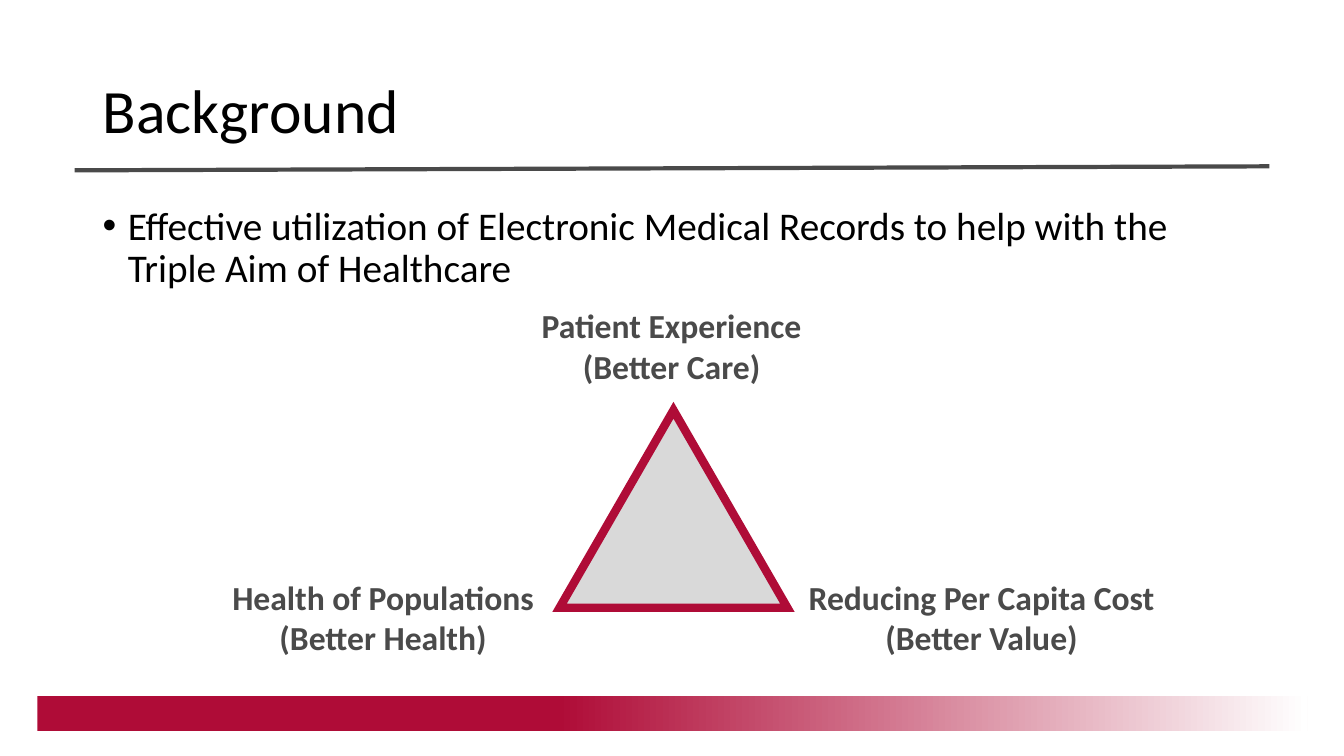
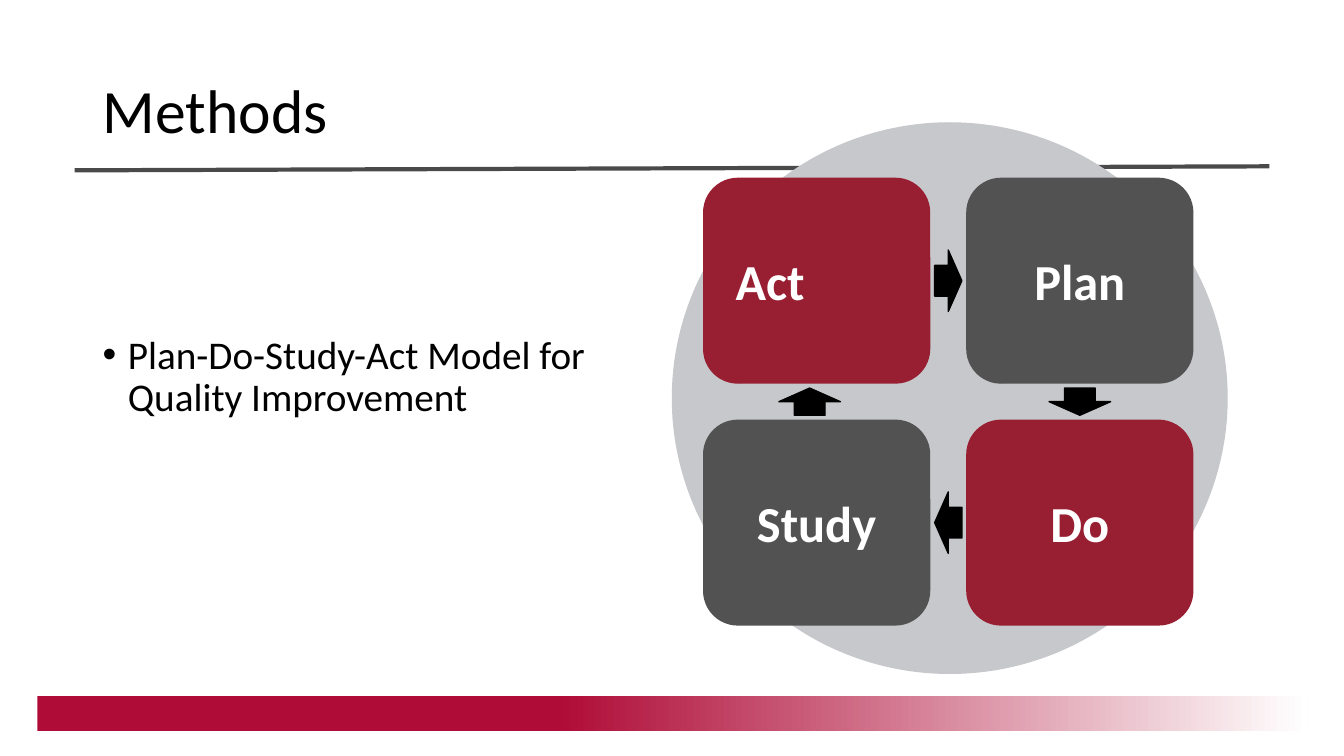
from copy import deepcopy

from lxml.etree import SubElement
from pptx import Presentation
from pptx.dml.color import RGBColor
from pptx.enum.shapes import MSO_CONNECTOR, MSO_SHAPE
from pptx.enum.text import MSO_ANCHOR, MSO_AUTO_SIZE, PP_ALIGN
from pptx.oxml.ns import qn
from pptx.util import Inches, Pt

# Shared style
FONT = "Calibri"
BLACK, WHITE, GREY = "000000", "FFFFFF", "4A4A4A"
CRIMSON, CARD_RED, CARD_GREY = "AF0C37", "981E32", "525252"
DISC, PALE = "C7C8CB", "D9D9D9"
TITLE = dict(size=Pt(44))
BODY = dict(size=Pt(28))
LABEL = dict(size=Pt(24), bold=True)
CARD = dict(size=Pt(36), bold=True)

# Content: title, bullet, box of the bullet, its anchor
BACKGROUND = ("Background",
              "Effective utilization of Electronic Medical Records to help "
              "with the Triple Aim of Healthcare",
              (0.92, 2, 11.5, 1.1), MSO_ANCHOR.TOP)
METHODS = ("Methods", "Plan-Do-Study-Act Model for Quality Improvement",
           (0.92, 3.1, 5.75, 1.3), MSO_ANCHOR.MIDDLE)

AIMS = [  # lines, box
    (("Patient Experience", "(Better Care)"), (4.92, 2.98, 3.48, 0.91)),
    (("Reducing Per Capita Cost", "(Better Value)"), (7.81, 5.67, 3.85, 0.91)),
    (("Health of Populations", "(Better Health)"), (2.06, 5.67, 3.48, 0.91)),
]

STEPS = [  # text, column, row, fill, right inset
    ("Plan", 1, 0, CARD_GREY, 0.1),
    ("Study", 0, 1, CARD_GREY, 0.1),
    ("Do", 1, 1, CARD_RED, 0.1),
    ("Act", 0, 0, CARD_RED, 1.02),
]
ARROWS = [  # column and row of the centre (0.5 is the gap), rotation, x shift
    (0, 0.5, 180, -0.07),
    (1, 0.5, 0, 0),
    (0.5, 1, 90, 0),
    (0.5, 0, 270, 0),
]


def rgb(value):
    return RGBColor.from_string(value)


def inches(box):
    return [Inches(v) for v in box]


def write(tf, lines, style, color, align=PP_ALIGN.LEFT, anchor=MSO_ANCHOR.TOP,
          spacing=1.0):
    tf.word_wrap = True
    tf.auto_size = MSO_AUTO_SIZE.NONE
    tf.vertical_anchor = anchor
    for i, line in enumerate(lines):
        p = tf.paragraphs[0] if i == 0 else tf.add_paragraph()
        p.alignment, p.line_spacing = align, spacing
        r = p.add_run()
        r.text = line
        for name, value in {"name": FONT, **style}.items():
            setattr(r.font, name, value)
        r.font.color.rgb = rgb(color)


def add_shape(shapes, kind, box, fill, line=None, width=1):
    sp = shapes.add_shape(kind, *inches(box))
    sp.shadow.inherit = False
    sp.fill.solid()
    sp.fill.fore_color.rgb = rgb(fill)
    if line:
        sp.line.color.rgb = rgb(line)
        sp.line.width = Pt(width)
    else:
        sp.line.fill.background()
    return sp


def add_band(s):
    band = add_shape(s.shapes, MSO_SHAPE.RECTANGLE, (0.37, 6.9, 12.6, 0.35), CRIMSON)
    band.fill.gradient()
    band.fill.gradient_angle = 0
    start, end = band.fill.gradient_stops
    start.color.rgb, start.position = rgb(CRIMSON), 0
    end.color.rgb, end.position = rgb(WHITE), 1
    # Third stop: solid crimson up to 41 %
    first = band._element.spPr.find(".//" + qn("a:gs"))
    middle = deepcopy(first)
    middle.set("pos", "41000")
    first.addnext(middle)


def add_bullet(s, text, box, anchor):
    tf = s.shapes.add_textbox(*inches(box)).text_frame
    write(tf, [text], BODY, BLACK, anchor=anchor, spacing=0.9)
    p = tf.paragraphs[0]
    p.space_before = Pt(10)
    pPr = p._p.get_or_add_pPr()
    pPr.set("marL", str(Inches(0.25)))
    pPr.set("indent", str(Inches(-0.25)))
    SubElement(pPr, qn("a:buFont"), typeface="Arial")
    SubElement(pPr, qn("a:buChar"), char="•")


def add_slide(prs, title, bullet, box, anchor):
    s = prs.slides.add_slide(prs.slide_layouts[5])
    sp = s.shapes.title
    sp.left, sp.top, sp.width, sp.height = inches((0.92, 0.4, 11.5, 1.45))
    write(sp.text_frame, [title], TITLE, BLACK, anchor=MSO_ANCHOR.MIDDLE, spacing=0.9)
    add_bullet(s, bullet, box, anchor)
    rule = s.shapes.add_connector(MSO_CONNECTOR.STRAIGHT,
                                  *inches((0.74, 1.69, 12.59, 1.65)))
    rule.line.color.rgb = rgb(GREY)
    rule.line.width = Pt(3)
    SubElement(rule._element.spPr, qn("a:effectLst"))
    add_band(s)
    return s


def add_triple_aim(s):
    triangle = add_shape(s.shapes, MSO_SHAPE.ISOSCELES_TRIANGLE,
                         (5.55, 4.07, 2.26, 1.96), PALE, CRIMSON, 6)
    ln = triangle._element.spPr.find(qn("a:ln"))
    SubElement(ln, qn("a:miter"), lim="800000")
    for lines, box in AIMS:
        tf = s.shapes.add_textbox(*inches(box)).text_frame
        write(tf, lines, LABEL, GREY, PP_ALIGN.CENTER)


def add_cycle(s):
    left, top, card_w, card_h = 6.98, 1.77, 2.24, 2.03
    step_x, step_y = 2.61, 2.4
    arrow_w, arrow_h = 0.61, 0.27
    shapes = s.shapes.add_group_shape().shapes
    add_shape(shapes, MSO_SHAPE.OVAL, (6.67, 1.22, 5.5, 5.46), DISC, DISC)

    for text, col, row, fill, inset in STEPS:
        box = (left + col * step_x, top + row * step_y, card_w, card_h)
        card = add_shape(shapes, MSO_SHAPE.ROUNDED_RECTANGLE, box, fill, fill)
        card.text_frame.margin_right = Inches(inset)
        write(card.text_frame, [text], CARD, WHITE, PP_ALIGN.CENTER, MSO_ANCHOR.MIDDLE)

    for col, row, rotation, shift in ARROWS:
        x = left + col * step_x + (card_w - arrow_w) / 2 + shift
        y = top + row * step_y + (card_h - arrow_h) / 2
        arrow = add_shape(shapes, MSO_SHAPE.DOWN_ARROW, (x, y, arrow_w, arrow_h),
                          BLACK, BLACK)
        arrow.rotation = rotation


def main():
    prs = Presentation()
    prs.slide_width, prs.slide_height = Inches(13.33), Inches(7.5)
    add_triple_aim(add_slide(prs, *BACKGROUND))
    add_cycle(add_slide(prs, *METHODS))
    prs.save("out.pptx")


if __name__ == "__main__":
    main()
